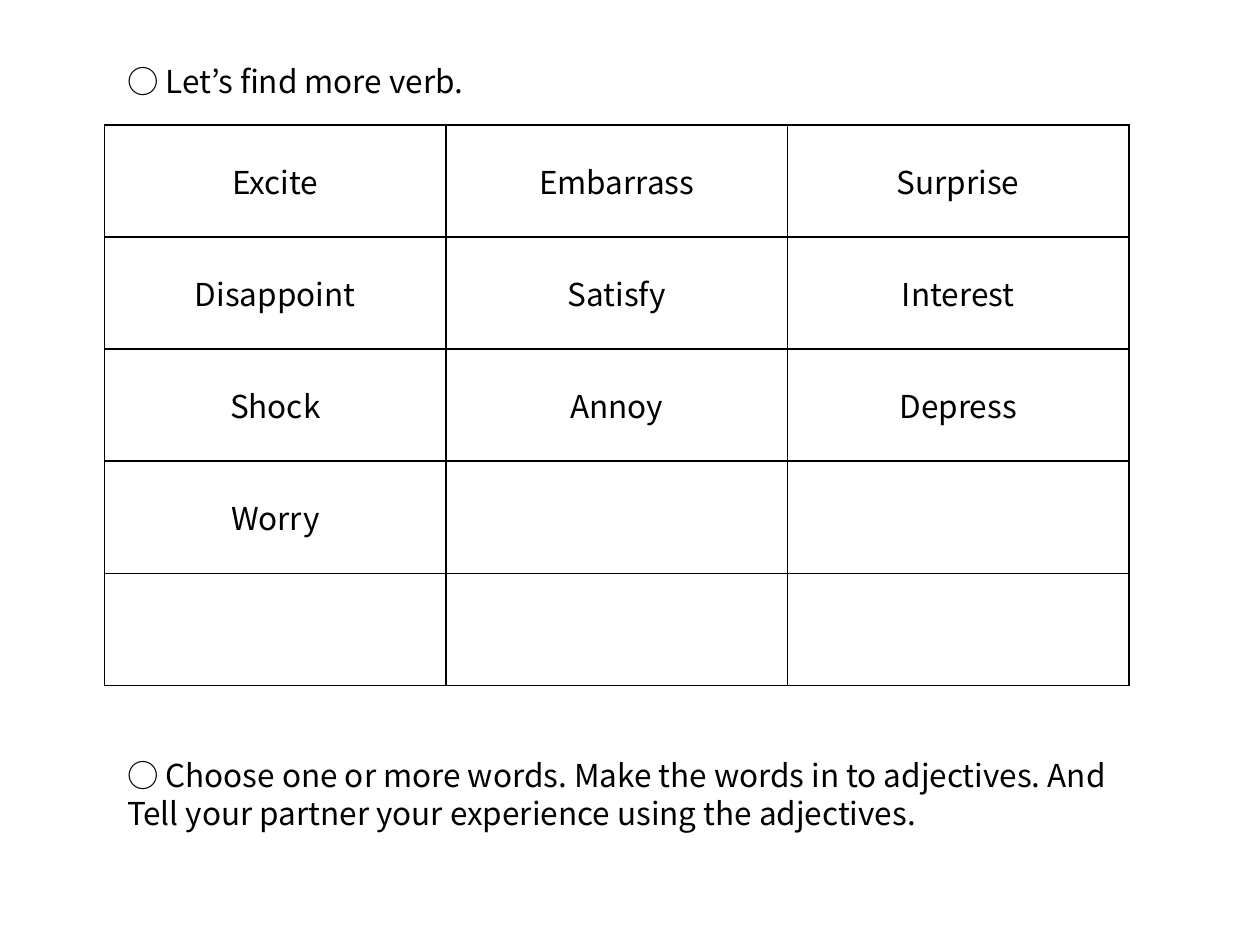
from lxml.etree import SubElement
from pptx import Presentation
from pptx.dml.color import RGBColor
from pptx.enum.text import MSO_ANCHOR, MSO_AUTO_SIZE, PP_ALIGN
from pptx.oxml.ns import qn
from pptx.util import Inches, Pt

FONT = "Noto Sans CJK KR"
COLORS = {"ink": "000000", "paper": "FFFFFF"}
LEFT, TOP = 0.83, 0.99
COL, ROW = 2.71, 0.89

VERBS = [
    ["Excite", "Embarrass", "Surprise"],
    ["Disappoint", "Satisfy", "Interest"],
    ["Shock", "Annoy", "Depress"],
]
BLANKS = [
    ["Worry", "", ""],
    ["", "", ""],
]


def style(frame):
    for run in frame.paragraphs[0].runs:
        font = run.font
        font.name = FONT
        font.size = Pt(18)
        font.color.rgb = RGBColor.from_string(COLORS["ink"])
        SubElement(font._element, qn("a:ea"), typeface=FONT)


def border(cell):
    """Draw a thin line on all four sides; call before the fill is set."""
    props = cell._tc.get_or_add_tcPr()
    for side in ("a:lnL", "a:lnR", "a:lnT", "a:lnB"):
        line = SubElement(props, qn(side), w=str(Pt(1)))
        fill = SubElement(line, qn("a:solidFill"))
        SubElement(fill, qn("a:srgbClr"), val=COLORS["ink"])


def add_grid(slide, top, words):
    rows, cols = len(words), len(words[0])
    frame = slide.shapes.add_table(
        rows, cols, Inches(LEFT), Inches(top),
        Inches(COL * cols), Inches(ROW * rows))
    table = frame.table
    table.first_row = table.horz_banding = False
    for col in table.columns:
        col.width = Inches(COL)
    for row, line in zip(table.rows, words):
        row.height = Inches(ROW)
        for cell, word in zip(row.cells, line):
            border(cell)
            cell.fill.solid()
            cell.fill.fore_color.rgb = RGBColor.from_string(COLORS["paper"])
            cell.vertical_anchor = MSO_ANCHOR.MIDDLE
            if word:
                cell.text_frame.text = word
                cell.text_frame.paragraphs[0].alignment = PP_ALIGN.CENTER
                style(cell.text_frame)


def add_task(slide, top, width, height, text):
    box = slide.shapes.add_textbox(
        Inches(0.91), Inches(top), Inches(width), Inches(height))
    frame = box.text_frame
    frame.word_wrap = True
    frame.auto_size = MSO_AUTO_SIZE.SHAPE_TO_FIT_TEXT
    frame.text = text
    style(frame)


def main():
    deck = Presentation()
    deck.slide_width, deck.slide_height = Inches(10), Inches(7.5)
    slide = deck.slides.add_slide(deck.slide_layouts[6])
    add_grid(slide, TOP, VERBS)
    add_grid(slide, TOP + ROW * len(VERBS), BLANKS)
    add_task(slide, 0.44, 7.48, 0.4, "○ Let’s find more verb.")
    add_task(slide, 5.95, 8.11, 0.71,
             "○ Choose one or more words. Make the words in to adjectives. "
             "And Tell your partner your experience using the adjectives.")
    deck.save("out.pptx")


if __name__ == "__main__":
    main()
